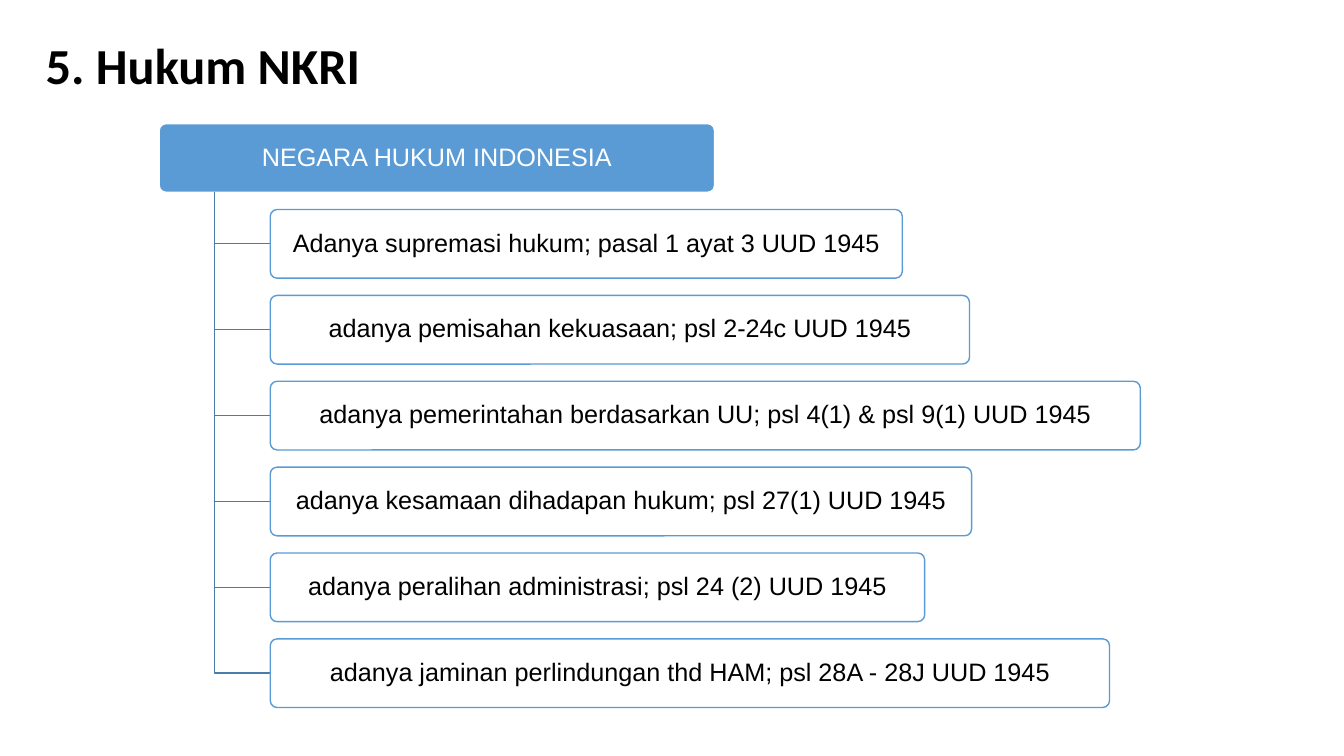
from pptx import Presentation
from pptx.dml.color import RGBColor
from pptx.enum import shapes, text
from pptx.util import Pt

BLACK = RGBColor(0x00, 0x00, 0x00)
WHITE = RGBColor(0xFF, 0xFF, 0xFF)
BLUE = RGBColor(0x5B, 0x9B, 0xD5)
BRANCH_BLUE = RGBColor(0x49, 0x7C, 0xAB)

HEADING = "NEGARA HUKUM INDONESIA"
# Each principle with the width of its box in points
PRINCIPLES = [
    ("Adanya supremasi hukum; pasal 1 ayat 3 UUD 1945", 451.5),
    ("adanya pemisahan kekuasaan; psl 2-24c UUD 1945", 499.5),
    ("adanya pemerintahan berdasarkan UU; psl 4(1) & psl 9(1) UUD 1945", 621.5),
    ("adanya kesamaan dihadapan hukum; psl 27(1) UUD 1945", 501),
    ("adanya peralihan administrasi; psl 24 (2) UUD 1945", 467.5),
    ("adanya jaminan perlindungan thd HAM; psl 28A - 28J UUD 1945", 599.5),
]


def write(shape, words, *, size=18, font="Arial", color=BLACK, bold=False,
          align=text.PP_ALIGN.CENTER, inset=(2.88, 2.16)):
    frame = shape.text_frame
    frame.word_wrap = True
    frame.auto_size = text.MSO_AUTO_SIZE.NONE
    frame.vertical_anchor = text.MSO_ANCHOR.MIDDLE
    frame.margin_left = frame.margin_right = Pt(inset[0])
    frame.margin_top = frame.margin_bottom = Pt(inset[1])
    paragraph = frame.paragraphs[0]
    paragraph.alignment = align
    paragraph.line_spacing = 0.9
    run = paragraph.add_run()
    run.text = words
    run.font.size = Pt(size)
    run.font.name = font
    run.font.bold = bold
    run.font.color.rgb = color


def add_box(slide, words, left, top, width, height, fill, line, color):
    box = slide.shapes.add_shape(shapes.MSO_SHAPE.ROUNDED_RECTANGLE,
                                 Pt(left), Pt(top), Pt(width), Pt(height))
    box.adjustments[0] = 0.1
    box.shadow.inherit = False
    box.fill.solid()
    box.fill.fore_color.rgb = fill
    box.line.color.rgb = line
    box.line.width = Pt(1)
    write(box, words, color=color)


def add_branch(slide, x1, y1, x2, y2):
    # Open elbow: down, then right
    builder = slide.shapes.build_freeform(Pt(x1), Pt(y1))
    builder.add_line_segments([(Pt(x1), Pt(y2)), (Pt(x2), Pt(y2))], close=False)
    branch = builder.convert_to_shape()
    branch.shadow.inherit = False
    branch.fill.background()
    branch.line.color.rgb = BRANCH_BLUE
    branch.line.width = Pt(1)


def add_title(slide, left, top, width, height):
    title = slide.shapes.title
    title.left, title.top = Pt(left), Pt(top)
    title.width, title.height = Pt(width), Pt(height)
    write(title, "5. Hukum NKRI", size=36, font="Calibri", bold=True,
          align=text.PP_ALIGN.LEFT, inset=(7.2, 3.6))


def add_hierarchy(slide, left, top, heading_width, height):
    # Seven rows, with gaps a quarter of a row high
    row = height / (len(PRINCIPLES) * 1.25 + 1)
    pitch = row * 1.25
    trunk_x = left + heading_width / 10
    item_left = left + heading_width / 5

    # Heading
    add_box(slide, HEADING, left, top, heading_width, row, BLUE, WHITE, WHITE)

    # Principles, each behind its branch from the heading
    for number, (principle, width) in enumerate(PRINCIPLES, start=1):
        item_top = top + number * pitch
        add_branch(slide, trunk_x, top + row, item_left, item_top + row / 2)
        add_box(slide, principle, item_left, item_top, width, row,
                WHITE, BLUE, BLACK)


def main():
    deck = Presentation()
    deck.slide_width, deck.slide_height = Pt(960), Pt(540)
    slide = deck.slides.add_slide(deck.slide_layouts[5])
    add_title(slide, 25.4, 20.5, 828, 56.2)
    add_hierarchy(slide, 113.7, 88.3, 396.7, 417.1)
    deck.save("out.pptx")


if __name__ == "__main__":
    main()
